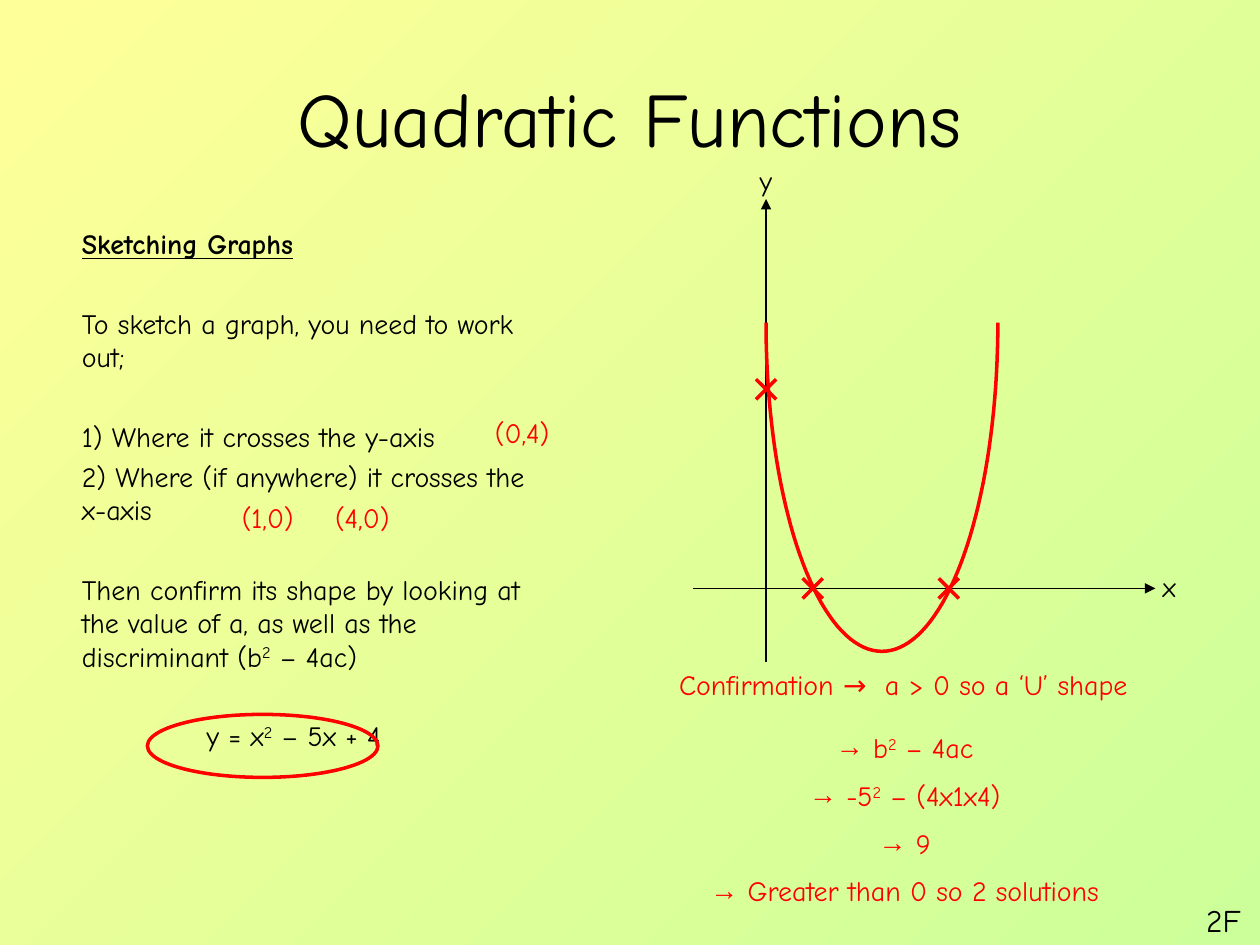
from math import cos, pi, sin

from lxml import etree
from pptx import Presentation
from pptx.dml.color import RGBColor
from pptx.enum.shapes import MSO_CONNECTOR, MSO_SHAPE
from pptx.enum.text import MSO_ANCHOR, MSO_AUTO_SIZE, PP_ALIGN
from pptx.oxml.ns import qn
from pptx.util import Inches, Pt

LEFT, CENTER = PP_ALIGN.LEFT, PP_ALIGN.CENTER
MIDDLE, TOP = MSO_ANCHOR.MIDDLE, MSO_ANCHOR.TOP
NO_AUTOFIT = MSO_AUTO_SIZE.NONE
STRAIGHT = MSO_CONNECTOR.STRAIGHT
OVAL = MSO_SHAPE.OVAL

THEME = {
    "font": "Comic Neue", "bullet_font": "Arial",
    "ink": RGBColor(0, 0, 0), "answer": RGBColor(255, 0, 0),
    "background": (RGBColor(255, 255, 153), RGBColor(204, 255, 153)),
    "title": 44, "body": 16, "code": 18,
    "axis": 0.75, "curve": 2,
}

# Text between carets is superscript
TITLE = "Quadratic Functions"
TITLE_AT = (0.5, 0.3, 9, 1.25)
BODY_AT = (0.17, 1.75, 4.25, 4.95)
CLOSE, APART = 3.6, 26.2
BODY_INDENT, EQUATION_INDENT = 0.38, 1.37
BODY = [  # text, space before, left indent
    ("Sketching Graphs", 0, BODY_INDENT),
    ("To sketch a graph, you need to work out;", APART, BODY_INDENT),
    ("1) Where it crosses the y-axis", APART, BODY_INDENT),
    ("2) Where (if anywhere) it crosses the x-axis", CLOSE, BODY_INDENT),
    ("Then confirm its shape by looking at the value of a, as well as the "
     "discriminant (b^2^ – 4ac)", APART, BODY_INDENT),
    ("y = x^2^ – 5x + 4", APART, EQUATION_INDENT),
]
LABELS = [  # text, place, alignment, colour, size
    ("2F", (9.42, 7.1, 0.58, 0.4), CENTER, "ink", "code"),
    ("(0,4)", (3.83, 3.25, 0.75, 0.37), LEFT, "answer", "body"),
    ("(1,0)", (1.75, 3.92, 0.75, 0.37), CENTER, "answer", "body"),
    ("(4,0)", (2.5, 3.92, 0.75, 0.37), CENTER, "answer", "body"),
    ("y", (5.93, 1.25, 0.36, 0.37), LEFT, "ink", "body"),
    ("x", (9.13, 4.47, 0.36, 0.37), LEFT, "ink", "body"),
    ("Confirmation →  a > 0 so a ‘U’ shape", (4.91, 5.25, 4.52, 0.37),
     CENTER, "answer", "body"),
]
STEPS_AT = (4.92, 5.75, 4.52, 1.57)
STEPS_GAP = 8.1
STEPS = [" b^2^ – 4ac", " -5^2^ – (4x1x4)", " 9",
         " Greater than 0 so 2 solutions"]

AXES = [((6.08, 5.25), (6.08, 1.58)), ((5.5, 4.67), (9.17, 4.67))]
CROSSINGS = [(6.08, 3.09), (7.53, 4.67), (6.45, 4.67)]
CROSS_ARM = 0.08
CURVE_CENTER, CURVE_RADII = (7, 2.56), (0.92, 2.61)
CURVE_STEPS = 80
RING_AT = (1.17, 5.67, 1.83, 0.5)


def place(shape, at):
    shape.left, shape.top, shape.width, shape.height = map(Inches, at)


def write(para, text, color="ink", size="body", align=LEFT, before=0):
    para.alignment = align
    para.space_before = Pt(before)
    font = para.font
    font.name, font.size = THEME["font"], Pt(THEME[size])
    font.color.rgb = THEME[color]
    for index, part in enumerate(text.split("^")):
        span = para.add_run()
        span.text = part
        if index % 2:
            span.font._element.set("baseline", "30000")


def indent(para, left, bullet=None):
    """Set the left margin and either a bullet character or none."""
    props = para._p.get_or_add_pPr()
    props.set("marL", str(Inches(left)))
    props.set("indent", "0")
    if bullet:
        etree.SubElement(props, qn("a:buFont"), typeface=THEME["bullet_font"])
        mark = etree.SubElement(props, qn("a:buChar"), char=bullet)
    else:
        mark = etree.SubElement(props, qn("a:buNone"))
    default = props.find(qn("a:defRPr"))
    if default is not None:
        props.remove(default)
        mark.addnext(default)


def paragraphs(frame, count):
    return [frame.paragraphs[0]] + [frame.add_paragraph()
                                    for _ in range(count - 1)]


def add_text_box(page, at):
    box = page.shapes.add_textbox(*map(Inches, at))
    box.text_frame.word_wrap = True
    return box.text_frame


def add_line(shapes, start, end, color, width, arrow=False):
    line = shapes.add_connector(STRAIGHT, *map(Inches, (*start, *end)))
    line.line.color.rgb = THEME[color]
    line.line.width = Pt(THEME[width])
    if arrow:
        etree.SubElement(line.line._get_or_add_ln(), qn("a:tailEnd"),
                         type="triangle")
    etree.SubElement(line._element.spPr, qn("a:effectLst"))


def outline(shape):
    shape.shadow.inherit = False
    shape.fill.background()
    shape.line.color.rgb = THEME["answer"]
    shape.line.width = Pt(THEME["curve"])


def add_cross(page, x, y):
    group = page.shapes.add_group_shape()
    for rise in (CROSS_ARM, -CROSS_ARM):
        add_line(group.shapes, (x - CROSS_ARM, y - rise),
                 (x + CROSS_ARM, y + rise), "answer", "curve")


def add_curve(page):
    """Draw the lower half of an ellipse as the U-shaped graph."""
    (x, y), (across, down) = CURVE_CENTER, CURVE_RADII
    angles = [pi * step / CURVE_STEPS for step in range(CURVE_STEPS + 1)]
    points = [(Inches(x + across * cos(angle)), Inches(y + down * sin(angle)))
              for angle in angles]
    builder = page.shapes.build_freeform(*points[0])
    builder.add_line_segments(points[1:], close=False)
    outline(builder.convert_to_shape())


def main():
    deck = Presentation()
    deck.slide_width, deck.slide_height = Inches(10), Inches(7.5)
    page = deck.slides.add_slide(deck.slide_layouts[1])
    fill = page.background.fill
    fill.gradient()
    fill.gradient_angle = 315
    for stop, color in zip(fill.gradient_stops, THEME["background"]):
        stop.color.rgb = color

    title, body = page.shapes.title, page.placeholders[1]
    for shape, at, anchor in ((title, TITLE_AT, MIDDLE), (body, BODY_AT, TOP)):
        place(shape, at)
        shape.text_frame.auto_size = NO_AUTOFIT
        shape.text_frame.vertical_anchor = anchor
    write(title.text_frame.paragraphs[0], TITLE, size="title", align=CENTER)

    body_paras = paragraphs(body.text_frame, len(BODY))
    for para, (text, before, left) in zip(body_paras, BODY):
        write(para, text, before=before)
        indent(para, left)
    heading = body_paras[0].font
    heading.bold = heading.underline = True

    for text, at, align, color, size in LABELS:
        write(add_text_box(page, at).paragraphs[0], text, color, size, align)

    steps = paragraphs(add_text_box(page, STEPS_AT), len(STEPS))
    for index, (para, text) in enumerate(zip(steps, STEPS)):
        write(para, text, "answer", align=CENTER,
              before=STEPS_GAP if index else 0)
        indent(para, 0, bullet="→")

    for start, end in AXES:
        add_line(page.shapes, start, end, "ink", "axis", arrow=True)
    for x, y in CROSSINGS:
        add_cross(page, x, y)
    outline(page.shapes.add_shape(OVAL, *map(Inches, RING_AT)))
    add_curve(page)
    deck.save("out.pptx")


if __name__ == "__main__":
    main()
